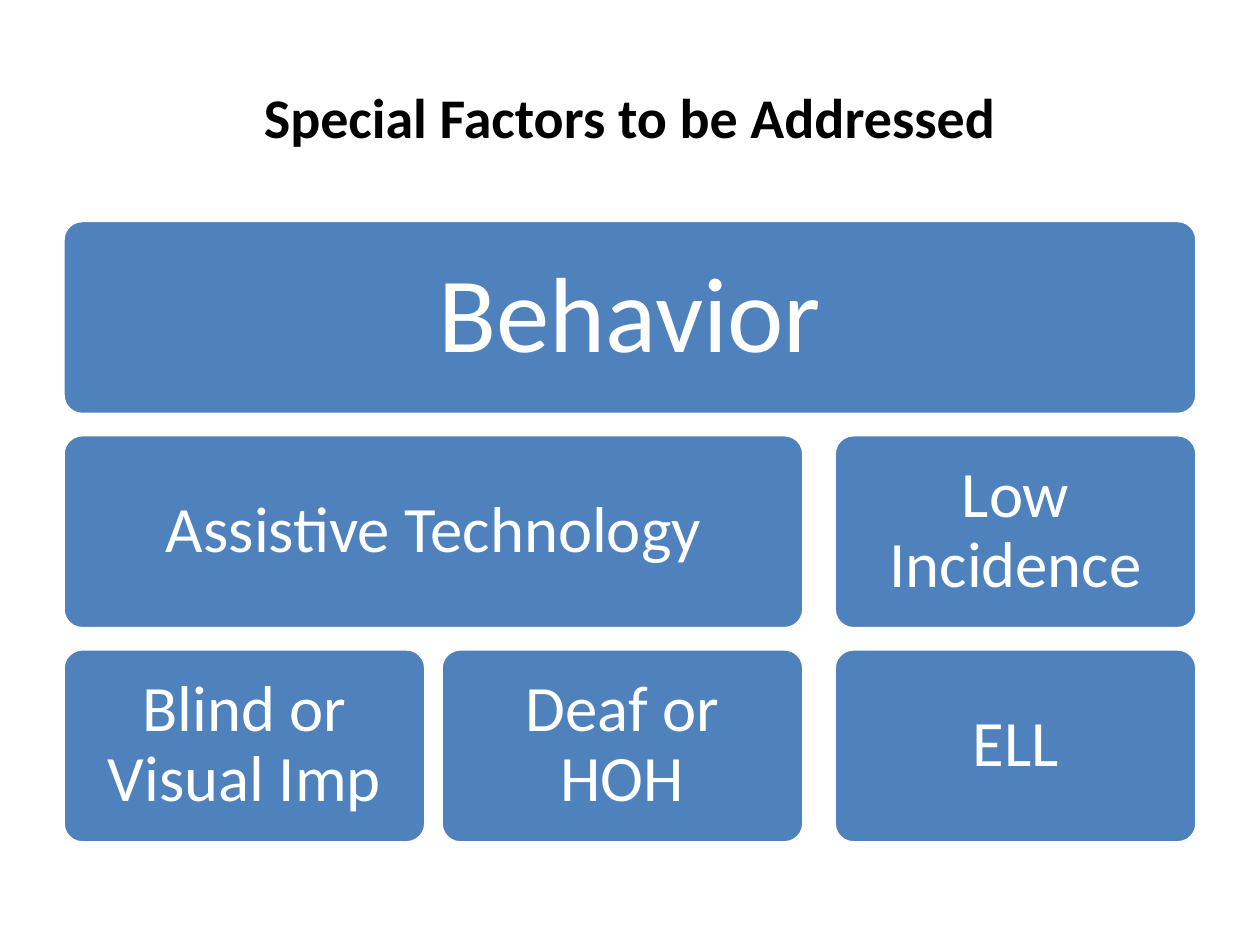
from pptx import Presentation
from pptx.dml.color import RGBColor
from pptx.enum.shapes import MSO_SHAPE as Shape
from pptx.enum.text import MSO_ANCHOR as Anchor, PP_ALIGN as Align
from pptx.util import Inches, Pt

BLACK = RGBColor(0x00, 0x00, 0x00)
WHITE = RGBColor(0xFF, 0xFF, 0xFF)
BLUE = RGBColor(0x4F, 0x81, 0xBD)

TOP, ROW_STEP, BOX_HEIGHT = 1.75, 1.7, 1.54
COLUMNS = (0.5, 3.5, 6.62)
COLUMN_WIDTH = 2.88

FACTORS = (
    ("Behavior", 0, 0, 2, 61, 0.25),
    ("Assistive Technology", 1, 0, 1, 37, 0.15),
    ("Blind or Visual Imp", 2, 0, 0, 37, 0.15),
    ("Deaf or HOH", 2, 1, 1, 37, 0.15),
    ("Low Incidence", 1, 2, 2, 37, 0.15),
    ("ELL", 2, 2, 2, 37, 0.15),
)


class SlideBuilder:
    """Holds the text style and the current slide, and adds its elements."""

    font = "Calibri"

    def __init__(self, slide):
        self.slide = slide

    def set_text(self, frame, text, size, color, bold=False):
        frame.text = text
        frame.word_wrap = True
        frame.vertical_anchor = Anchor.MIDDLE
        para = frame.paragraphs[0]
        para.alignment = Align.CENTER
        font = para.runs[0].font
        font.name, font.size, font.bold = self.font, Pt(size), bold
        font.color.rgb = color
        return para

    def title(self, text):
        title = self.slide.shapes.title
        title.left, title.top = Inches(0.5), Inches(0.3)
        title.width, title.height = Inches(9), Inches(1.25)
        self.set_text(title.text_frame, text, 32, BLACK, bold=True)

    def factor(self, text, row, first, last, size, margin):
        left = COLUMNS[first]
        width = COLUMNS[last] + COLUMN_WIDTH - left
        box = self.slide.shapes.add_shape(
            Shape.ROUNDED_RECTANGLE, Inches(left), Inches(TOP + row * ROW_STEP),
            Inches(width), Inches(BOX_HEIGHT))
        box.adjustments[0] = 0.1
        box.shadow.inherit = False
        box.fill.solid()
        box.fill.fore_color.rgb = BLUE
        box.line.color.rgb = WHITE
        box.line.width = Pt(2)
        frame = box.text_frame
        frame.margin_left = frame.margin_right = Inches(margin)
        frame.margin_top = frame.margin_bottom = Inches(margin)
        self.set_text(frame, text, size, WHITE).line_spacing = 0.9


def main():
    deck = Presentation()
    deck.slide_width, deck.slide_height = Inches(10), Inches(7.5)
    builder = SlideBuilder(deck.slides.add_slide(deck.slide_layouts[5]))
    builder.title("Special Factors to be Addressed")
    for factor in FACTORS:
        builder.factor(*factor)
    deck.save("out.pptx")


if __name__ == "__main__":
    main()
